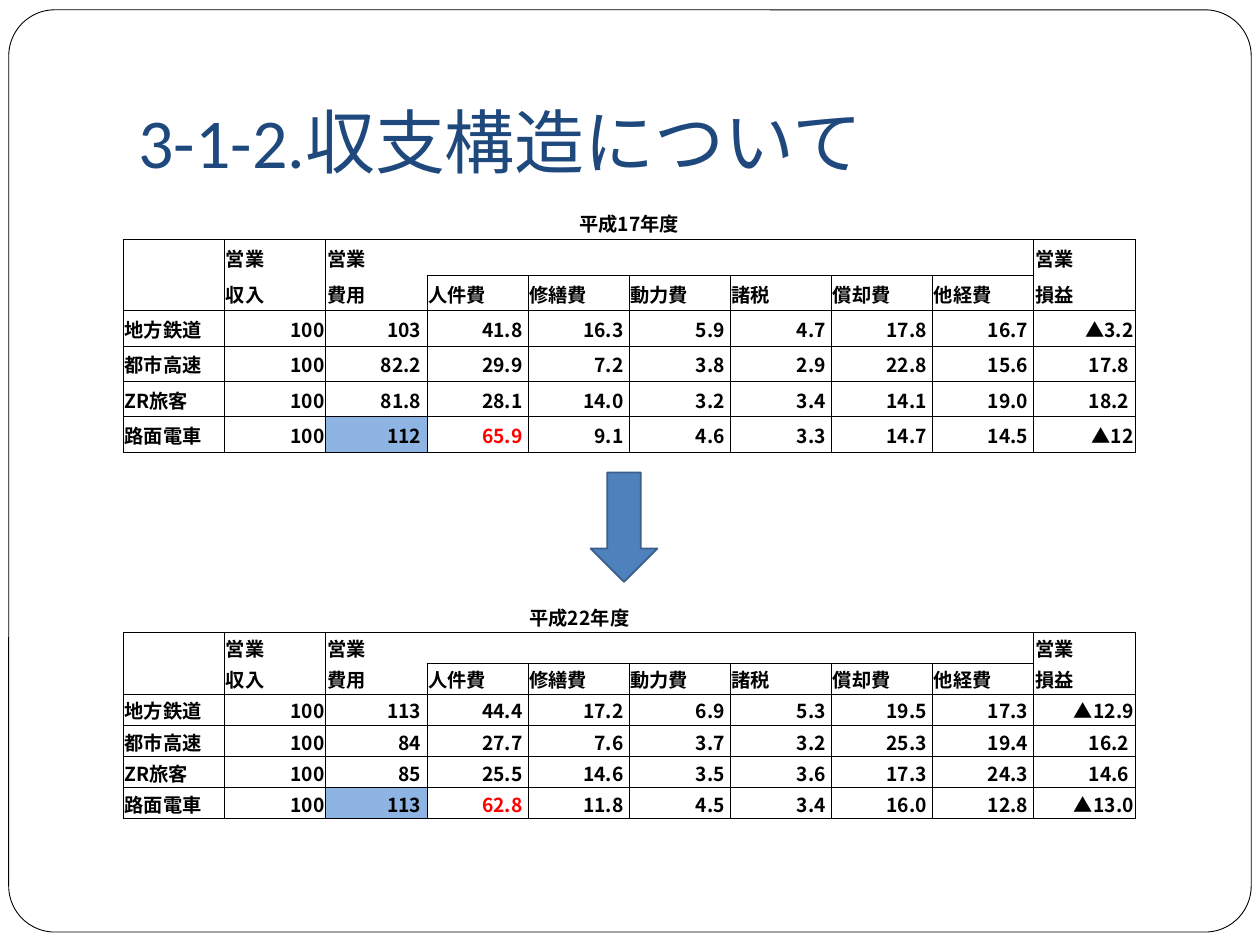
"""Build the slide comparing railway income and cost structure in two fiscal years."""
import dataclasses

import lxml.etree
import pptx
import pptx.dml.color
import pptx.enum.lang
import pptx.enum.shapes
import pptx.enum.text
import pptx.oxml.ns
import pptx.util

Pt = pptx.util.Pt
qn = pptx.oxml.ns.qn
Align = pptx.enum.text.PP_ALIGN
Anchor = pptx.enum.text.MSO_ANCHOR
Shape = pptx.enum.shapes.MSO_SHAPE


@dataclasses.dataclass(frozen=True)
class Theme:
    """Colours, fonts and type sizes of the slide."""
    paper: str = "FFFFFF"
    ink: str = "000000"
    title: str = "1F497D"
    arrow: str = "4F81BD"
    arrow_line: str = "3A5F8C"
    highlight: str = "8DB4E2"
    alert: str = "FF0000"
    latin_font: str = "Calibri"
    japanese_font: str = "Noto Sans CJK JP"
    title_size: float = 40
    table_size: float = 11
    rule: float = 0.5


THEME = Theme()
COLUMNS = 10
COLUMN_WIDTH = 57.82
CAPTION_COLUMN = 4
COST_COLUMN = 2
LABOUR_COLUMN = 3
LAST_COLUMN = COLUMNS - 1
HEADER = [
    ["", "営業", "営業", "", "", "", "", "", "", "営業"],
    ["", "収入", "費用", "人件費", "修繕費", "動力費", "諸税", "償却費", "他経費", "損益"],
]
OPERATORS = ["地方鉄道", "都市高速", "ZR旅客", "路面電車"]
FIGURES_17 = [
    "100 103 41.8 16.3 5.9 4.7 17.8 16.7 ▲3.2",
    "100 82.2 29.9 7.2 3.8 2.9 22.8 15.6 17.8",
    "100 81.8 28.1 14.0 3.2 3.4 14.1 19.0 18.2",
    "100 112 65.9 9.1 4.6 3.3 14.7 14.5 ▲12",
]
FIGURES_22 = [
    "100 113 44.4 17.2 6.9 5.3 19.5 17.3 ▲12.9",
    "100 84 27.7 7.6 3.7 3.2 25.3 19.4 16.2",
    "100 85 25.5 14.6 3.5 3.6 17.3 24.3 14.6",
    "100 113 62.8 11.8 4.5 3.4 16.0 12.8 ▲13.0",
]


def rgb(colour):
    """Turn a hex string into a colour value."""
    return pptx.dml.color.RGBColor.from_string(colour)


def add_run(paragraph, text, size, colour, font, bold=False):
    """Append one styled run to a paragraph."""
    run = paragraph.add_run()
    run.text = text
    run.font.size = Pt(size)
    run.font.bold = bold
    run.font.name = font
    run.font.color.rgb = rgb(colour)
    run.font.language_id = pptx.enum.lang.MSO_LANGUAGE_ID.JAPANESE
    east_asian = lxml.etree.SubElement(run.font._element, qn("a:ea"))
    east_asian.set("typeface", THEME.japanese_font)


def add_shape(slide, kind, box, fill, line, line_width):
    """Add a preset shape with a plain fill and outline."""
    shape = slide.shapes.add_shape(kind, *map(Pt, box))
    shape.shadow.inherit = False
    shape.fill.solid()
    shape.fill.fore_color.rgb = rgb(fill)
    shape.line.color.rgb = rgb(line)
    shape.line.width = Pt(line_width)
    return shape


def add_title(slide, text, box):
    """Add the slide title, resting on the bottom of its box."""
    frame = slide.shapes.add_textbox(*map(Pt, box)).text_frame
    frame.word_wrap = True
    frame.vertical_anchor = Anchor.BOTTOM
    frame.margin_bottom = Pt(7.2)
    add_run(frame.paragraphs[0], text, THEME.title_size, THEME.title, THEME.latin_font)


def border_sides(row, column):
    """Name the ruled sides of a cell."""
    if row == 0:
        return "B"
    if row > 2 or (row == 2 and LABOUR_COLUMN <= column < LAST_COLUMN):
        return "LRTB"
    if row == 2:
        return "LRB"
    if column == COST_COLUMN:
        return "LT"
    if LABOUR_COLUMN <= column < LAST_COLUMN:
        return "TRB" if column == LAST_COLUMN - 1 else "TB"
    return "LRT"


def set_borders(cell, sides):
    """Rule the named sides of a cell and clear the others."""
    properties = cell._tc.get_or_add_tcPr()
    for side in "LRTB":
        line = lxml.etree.SubElement(properties, qn(f"a:ln{side}"))
        if side in sides:
            line.set("w", str(int(Pt(THEME.rule))))
            fill = lxml.etree.SubElement(line, qn("a:solidFill"))
            lxml.etree.SubElement(fill, qn("a:srgbClr")).set("val", THEME.ink)
        else:
            line.set("w", "0")
            lxml.etree.SubElement(line, qn("a:noFill"))


def fill_cell(cell, text, sides, alignment, colour, fill):
    """Set the text, borders and fill of one cell."""
    cell.margin_left = cell.margin_right = cell.margin_top = Pt(0.72)
    cell.margin_bottom = Pt(0)
    cell.vertical_anchor = Anchor.MIDDLE
    set_borders(cell, sides)
    if fill:
        cell.fill.solid()
        cell.fill.fore_color.rgb = rgb(fill)
    else:
        cell.fill.background()
    paragraph = cell.text_frame.paragraphs[0]
    paragraph.alignment = alignment
    if text:
        add_run(paragraph, text, THEME.table_size, colour, THEME.japanese_font, True)
    else:
        end = lxml.etree.SubElement(paragraph._p, qn("a:endParaRPr"))
        end.set("sz", str(int(THEME.table_size * 100)))


def figure_text(column, value):
    """Leave the place of a closing bracket after cost and profit figures."""
    return value if column == 1 or value.startswith("▲") else value + " "


def table_rows(caption, figures):
    """Join the caption, header and figures into rows of text."""
    first = [caption if column == CAPTION_COLUMN else "" for column in range(COLUMNS)]
    body = [
        [operator] + [figure_text(i, value) for i, value in enumerate(line.split(), 1)]
        for operator, line in zip(OPERATORS, figures)
    ]
    return [first] + HEADER + body


def add_year_table(slide, caption, figures, top, row_height, caption_alignment):
    """Add the cost table of one fiscal year."""
    rows = table_rows(caption, figures)
    box = (70.56, top, COLUMN_WIDTH * COLUMNS, row_height * len(rows))
    table = slide.shapes.add_table(len(rows), COLUMNS, *map(Pt, box)).table
    table.first_row = table.horz_banding = False
    for column in table.columns:
        column.width = Pt(COLUMN_WIDTH)
    for row in table.rows:
        row.height = Pt(row_height)
    table.cell(0, CAPTION_COLUMN).merge(table.cell(0, CAPTION_COLUMN + 1))
    for r, texts in enumerate(rows):
        for c, text in enumerate(texts):
            tram = r == len(rows) - 1
            alignment = Align.RIGHT if r > 2 and c > 0 else Align.LEFT
            fill_cell(
                table.cell(r, c), text, border_sides(r, c),
                caption_alignment if r == 0 else alignment,
                THEME.alert if tram and c == LABOUR_COLUMN else THEME.ink,
                THEME.highlight if tram and c == COST_COLUMN else None,
            )


def main():
    """Build and save the presentation."""
    presentation = pptx.Presentation()
    presentation.slide_width, presentation.slide_height = Pt(720), Pt(540)
    slide = presentation.slides.add_slide(presentation.slide_layouts[6])
    frame = add_shape(slide, Shape.ROUNDED_RECTANGLE, (5, 5.6, 710, 527),
                      THEME.paper, THEME.ink, THEME.rule)
    frame.adjustments[0] = 0.05
    add_title(slide, "3-1-2.収支構造について", (72, 21.6, 612, 90))
    add_year_table(slide, "平成17年度", FIGURES_17, 116.8, 20.25, Align.CENTER)
    add_year_table(slide, "平成22年度", FIGURES_22, 343.4, 17.8, Align.LEFT)
    add_shape(slide, Shape.DOWN_ARROW, (337.5, 270, 38.2, 62.5),
              THEME.arrow, THEME.arrow_line, 1)
    presentation.save("out.pptx")


if __name__ == "__main__":
    main()
